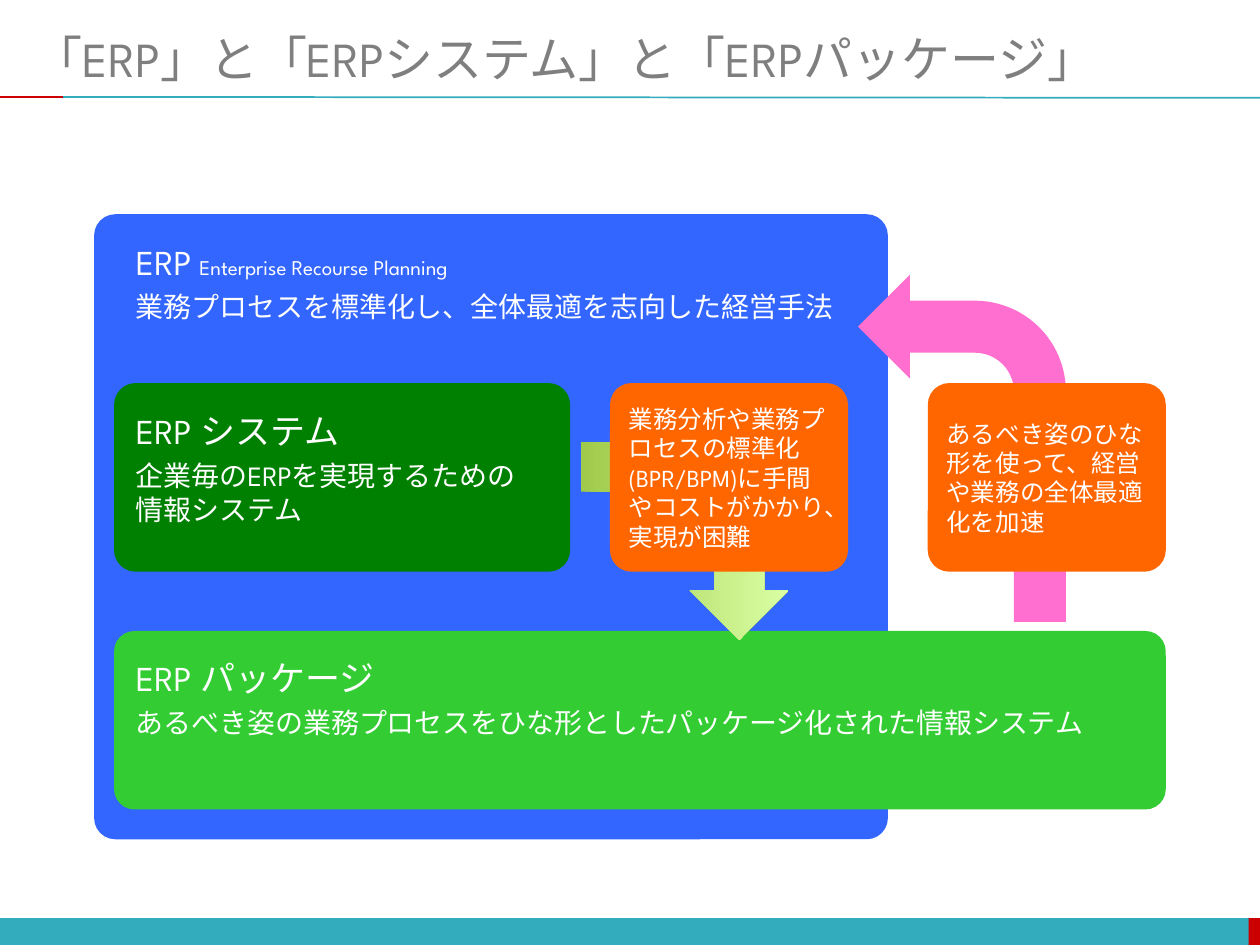
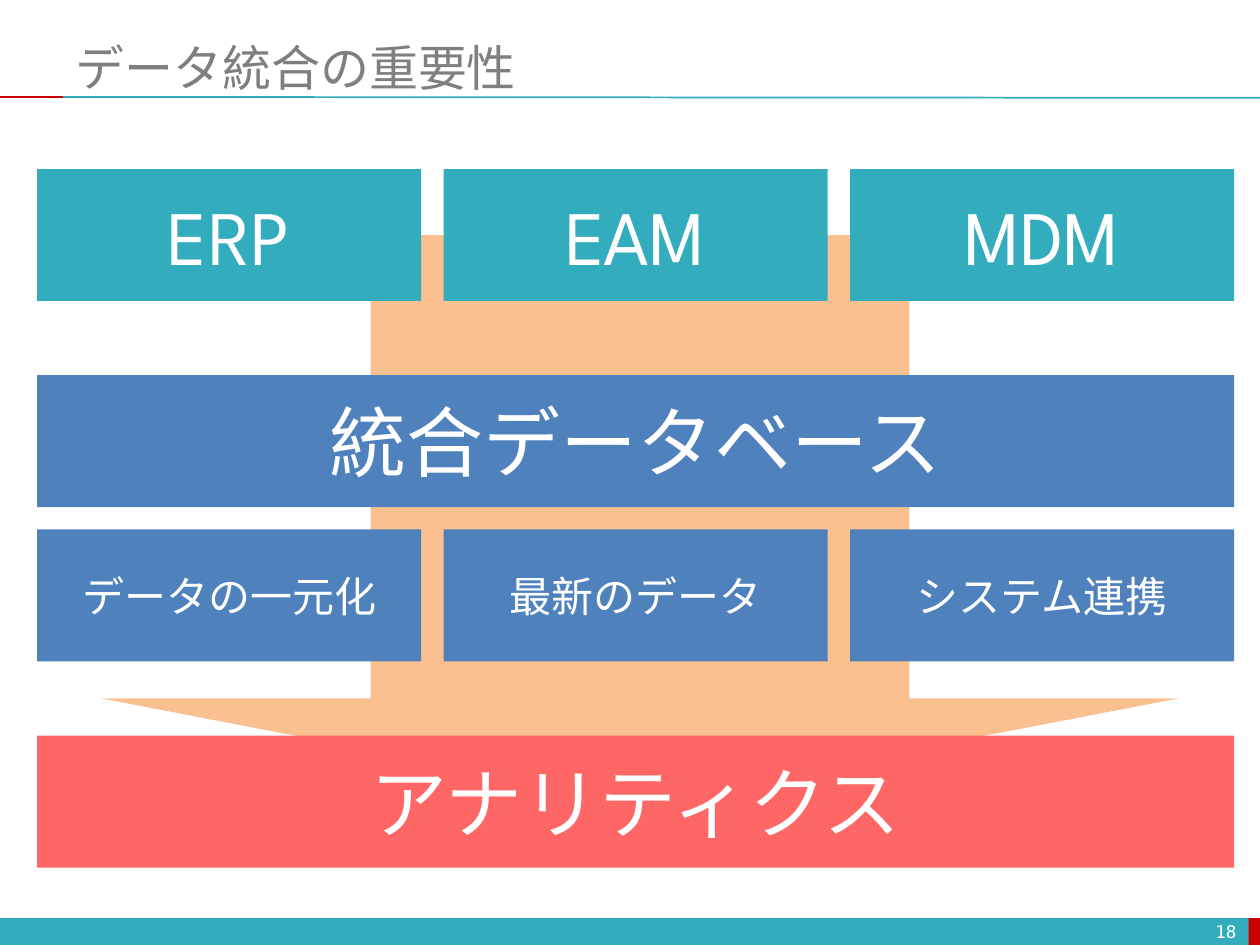
from dataclasses import dataclass

from lxml import etree
from pptx import Presentation
from pptx.dml.color import RGBColor
from pptx.enum.shapes import MSO_CONNECTOR, MSO_SHAPE
from pptx.enum.text import MSO_ANCHOR, MSO_AUTO_SIZE, PP_ALIGN
from pptx.oxml.ns import qn
from pptx.util import Pt

RECTANGLE = MSO_SHAPE.RECTANGLE
ROUNDED = MSO_SHAPE.ROUNDED_RECTANGLE
BENT_ARROW = MSO_SHAPE.BENT_ARROW
DOWN_ARROW = MSO_SHAPE.DOWN_ARROW
STRAIGHT = MSO_CONNECTOR.STRAIGHT
MIDDLE = MSO_ANCHOR.MIDDLE
LEFT, CENTER, RIGHT = PP_ALIGN.LEFT, PP_ALIGN.CENTER, PP_ALIGN.RIGHT

COLORS = {
    "teal": "33ACBD", "accent": "CC0000", "title": "7F7F7F", "white": "FFFFFF",
    "method": "3366FF", "system": "008000", "package": "33CC33", "note": "FF6600",
    "flow_start": "A0CA4A", "flow_end": "DAFFA5", "feedback": "FF6FCF",
    "data": "4F81BD", "analytics": "FF6666", "down_arrow": "FAC090",
}
FONT = "League Spartan"
NUMBER_FONT = "DejaVu Sans Mono"
TITLE_ONLY = 5
CORNER = 0.114

Run = tuple[str, float]


@dataclass(frozen=True)
class Box:
    left: float
    top: float
    width: float
    height: float

    def lengths(self) -> tuple:
        return Pt(self.left), Pt(self.top), Pt(self.width), Pt(self.height)


@dataclass(frozen=True)
class Panel:
    box: Box
    color: str
    corner: float = CORNER
    text: str = ""


@dataclass(frozen=True)
class Label:
    box: Box
    paragraphs: list[list[Run]]


@dataclass(frozen=True)
class Row:
    top: float
    color: str
    size: float
    texts: list[str]


def rgb(name: str) -> RGBColor:
    return RGBColor.from_string(COLORS[name])


def add_runs(paragraph, runs: list[Run], color: str = "white",
             align=LEFT, font: str = FONT) -> None:
    paragraph.alignment = align
    for text, size in runs:
        run = paragraph.add_run()
        run.text = text
        run.font.name = font
        run.font.size = Pt(size)
        run.font.color.rgb = rgb(color)


def add_block(slide, kind, box: Box, color: str):
    shape = slide.shapes.add_shape(kind, *box.lengths())
    shape.shadow.inherit = False
    shape.fill.solid()
    shape.fill.fore_color.rgb = rgb(color)
    shape.line.fill.background()
    return shape


def write_in(shape, text: str, size: float, align) -> None:
    frame = shape.text_frame
    frame.word_wrap = True
    frame.vertical_anchor = MIDDLE
    add_runs(frame.paragraphs[0], [(text, size)], align=align)


def add_panel(slide, panel: Panel) -> None:
    shape = add_block(slide, ROUNDED, panel.box, panel.color)
    shape.adjustments[0] = panel.corner
    if panel.text:
        write_in(shape, panel.text, 14, LEFT)


def add_label(slide, label: Label) -> None:
    frame = slide.shapes.add_textbox(*label.box.lengths()).text_frame
    frame.word_wrap = False
    frame.auto_size = MSO_AUTO_SIZE.SHAPE_TO_FIT_TEXT
    for index, runs in enumerate(label.paragraphs):
        paragraph = frame.add_paragraph() if index else frame.paragraphs[0]
        add_runs(paragraph, runs)


def add_rule(slide, start: tuple, end: tuple, color: str) -> None:
    points = [Pt(value) for value in (*start, *end)]
    connector = slide.shapes.add_connector(STRAIGHT, *points)
    connector.line.color.rgb = rgb(color)
    connector.line.width = Pt(1)
    etree.SubElement(connector._element.spPr, qn("a:effectLst"))


def add_framed_slide(presentation, title: str, title_box: Box):
    slide = presentation.slides.add_slide(presentation.slide_layouts[TITLE_ONLY])
    # Footer band and title rule
    add_block(slide, RECTANGLE, Box(0, 524.6, 720, 15.6), "teal")
    add_block(slide, RECTANGLE, Box(713.5, 524.6, 6.5, 15.6), "accent")
    add_rule(slide, (36, 55.4), (720, 55.9), "teal")
    add_rule(slide, (0, 55.4), (36, 55.4), "accent")
    # Title
    shape = slide.shapes.title
    shape.left, shape.top, shape.width, shape.height = title_box.lengths()
    frame = shape.text_frame
    frame.auto_size = MSO_AUTO_SIZE.NONE
    frame.vertical_anchor = MIDDLE
    add_runs(frame.paragraphs[0], [(title, 28)], "title")
    return slide


def build_erp_slide(presentation) -> None:
    slide = add_framed_slide(presentation, "「ERP」と「ERPシステム」と「ERPパッケージ」",
                             Box(12, 12, 708, 42))
    # Nested panels
    for panel in (
        Panel(Box(53.8, 122.4, 453.6, 357.2), "method", 0.034),
        Panel(Box(65.2, 218.9, 260.6, 107.8), "system"),
        Panel(Box(65.2, 360.6, 601, 102), "package"),
    ):
        add_panel(slide, panel)

    # Headings and explanations
    text_left = 70.6
    for label in (
        Label(Box(text_left, 133.9, 221.8, 31.7),
              [[("ERP", 20), (" ", 18), ("Enterprise Recourse Planning", 12)]]),
        Label(Box(text_left, 162, 418.3, 26.6),
              [[("業務プロセスを標準化し、全体最適を志向した経営手法", 16)]]),
        Label(Box(text_left, 230.4, 140.4, 31.7), [[("ERP システム", 20)]]),
        Label(Box(text_left, 258.5, 239.8, 46),
              [[("企業毎のERPを実現するための", 16)], [("情報システム", 16)]]),
        Label(Box(text_left, 371.6, 160.6, 31.7), [[("ERP パッケージ", 20)]]),
        Label(Box(text_left, 399.6, 563.8, 26.6),
              [[("あるべき姿の業務プロセスをひな形としたパッケージ化された情報システム", 16)]]),
    ):
        add_label(slide, label)

    # Arrow from system to package
    flow = add_block(slide, BENT_ARROW, Box(334.8, 249.8, 113, 118.8), "flow_start")
    flow.rotation = 90
    flow.fill.gradient()
    flow.fill.gradient_angle = 90
    for stop, color in zip(flow.fill.gradient_stops, ("flow_start", "flow_end")):
        stop.color.rgb = rgb(color)

    # Arrow from package back to the method
    feedback = add_block(slide, BENT_ARROW, Box(490.3, 157, 118.8, 198.4), "feedback")
    feedback._element.spPr.find(qn("a:xfrm")).set("flipH", "1")

    # Notes on the arrows
    for left, text in (
        (348.6, "業務分析や業務プロセスの標準化(BPR/BPM)に手間やコストがかかり、実現が困難"),
        (530.2, "あるべき姿のひな形を使って、経営や業務の全体最適化を加速"),
    ):
        add_panel(slide, Panel(Box(left, 218.9, 136, 107.8), "note", text=text))


def build_data_slide(presentation) -> None:
    slide = add_framed_slide(presentation, "データ統合の重要性", Box(36, 21.6, 684, 33.1))
    arrow = add_block(slide, DOWN_ARROW, Box(57.9, 134.4, 615.6, 324), "down_arrow")
    arrow.adjustments[0] = 0.5
    arrow.adjustments[1] = 0.183

    # Rows of equal cells
    left, total, gap, height = 21.2, 684, 12.8, 75.4
    for row in (
        Row(96.6, "teal", 44, ["ERP", "EAM", "MDM"]),
        Row(214.4, "data", 44, ["統合データベース"]),
        Row(302.5, "data", 24, ["データの一元化", "最新のデータ", "システム連携"]),
        Row(420.4, "analytics", 44, ["アナリティクス"]),
    ):
        count = len(row.texts)
        width = (total - gap * (count - 1)) / count
        for column, text in enumerate(row.texts):
            cell = Box(left + column * (width + gap), row.top, width, height)
            write_in(add_block(slide, RECTANGLE, cell, row.color), text, row.size, CENTER)

    # Slide number
    frame = slide.shapes.add_textbox(*Box(545.8, 523.6, 167.8, 17).lengths()).text_frame
    frame.word_wrap = True
    frame.vertical_anchor = MIDDLE
    add_runs(frame.paragraphs[0], [("18", 10)], align=RIGHT, font=NUMBER_FONT)


def main() -> None:
    presentation = Presentation()
    presentation.slide_width, presentation.slide_height = Pt(720), Pt(540)
    build_erp_slide(presentation)
    build_data_slide(presentation)
    presentation.save("out.pptx")


if __name__ == "__main__":
    main()
